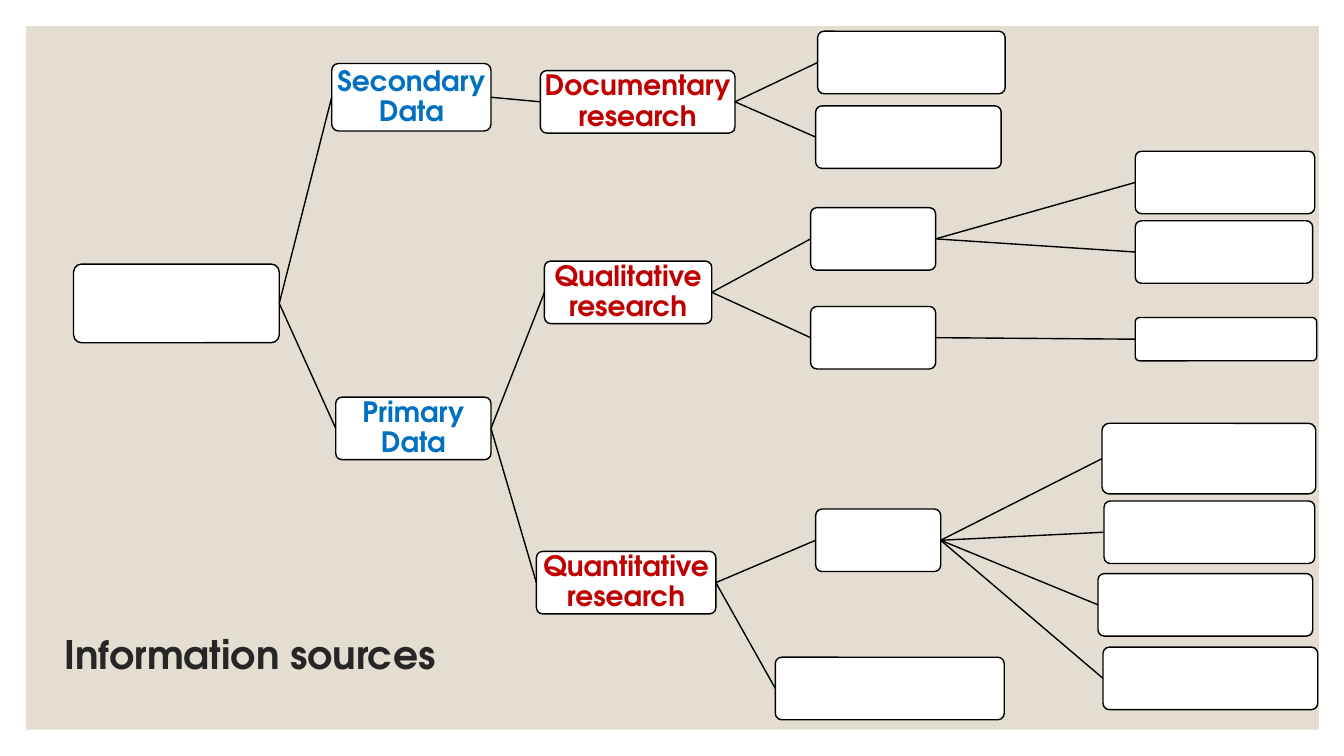
from dataclasses import dataclass

from lxml.etree import SubElement
from pptx import Presentation
from pptx.dml.color import RGBColor
from pptx.enum.shapes import MSO_CONNECTOR, MSO_SHAPE
from pptx.enum.text import MSO_ANCHOR, MSO_AUTO_SIZE, PP_ALIGN
from pptx.oxml.ns import qn
from pptx.util import Inches, Pt


@dataclass(frozen=True)
class Theme:
    """Colours, font and type sizes of the slide."""
    panel: RGBColor = RGBColor(0xE3, 0xDE, 0xD1)
    node: RGBColor = RGBColor(0xFF, 0xFF, 0xFF)
    line: RGBColor = RGBColor(0, 0, 0)
    data: RGBColor = RGBColor(0x00, 0x70, 0xC0)
    research: RGBColor = RGBColor(0xC0, 0, 0)
    title: RGBColor = RGBColor(0x26, 0x26, 0x26)
    font: str = "TeX Gyre Adventor"
    title_size: Pt = Pt(28)
    node_size: Pt = Pt(20)
    line_width: Pt = Pt(1)


@dataclass(frozen=True)
class Node:
    """A box of the tree, with its label and its branches."""
    box: tuple
    label: str = ""
    color: RGBColor = None
    branches: tuple = ()


THEME = Theme()
ROW = 0.62
LEFT_SIDE, RIGHT_SIDE = 1, 3

SECONDARY = Node((3.29, 0.63, 1.58, 0.67), "Secondary Data", THEME.data, (
    Node((5.36, 0.7, 1.93, ROW), "Documentary research", THEME.research, (
        Node((8.11, 0.31, 1.86, ROW)),
        Node((8.09, 1.05, 1.84, ROW)),
    )),
))
QUALITATIVE = Node((5.4, 2.59, 1.66, ROW), "Qualitative research", THEME.research, (
    Node((8.04, 2.06, 1.24, ROW), branches=(
        Node((11.26, 1.5, 1.78, ROW)),
        Node((11.26, 2.19, 1.76, ROW)),
    )),
    Node((8.04, 3.04, 1.24, ROW), branches=(
        Node((11.26, 3.15, 1.8, 0.43)),
    )),
))
QUANTITATIVE = Node((5.32, 5.47, 1.78, ROW), "Quantitative research", THEME.research, (
    Node((8.09, 5.05, 1.24, ROW), branches=(
        Node((10.93, 4.2, 2.12, 0.7)),
        Node((10.95, 4.97, 2.09, ROW)),
        Node((10.89, 5.69, 2.13, ROW)),
        Node((10.94, 6.42, 2.13, ROW)),
    )),
    Node((7.69, 6.52, 2.27, ROW)),
))
PRIMARY = Node((3.33, 3.94, 1.54, ROW), "Primary Data", THEME.data,
               (QUALITATIVE, QUANTITATIVE))
SOURCES = Node((0.73, 2.62, 2.04, 0.78), branches=(SECONDARY, PRIMARY))


def style_text(para, size, color, align):
    """Format a paragraph in the slide's bold font."""
    para.alignment = align
    para.line_spacing = 0.9
    para.font.name = THEME.font
    para.font.size = size
    para.font.bold = True
    para.font.color.rgb = color


def add_panel(page, box):
    """Fill the box with the tinted backdrop."""
    panel = page.shapes.add_shape(MSO_SHAPE.RECTANGLE, *map(Inches, box))
    panel.shadow.inherit = False
    panel.fill.solid()
    panel.fill.fore_color.rgb = THEME.panel
    panel.line.fill.background()


def add_node(page, node):
    """Draw one rounded box with its label."""
    shape = page.shapes.add_shape(MSO_SHAPE.ROUNDED_RECTANGLE, *map(Inches, node.box))
    shape.adjustments[0] = 0.1
    shape.shadow.inherit = False
    shape.fill.solid()
    shape.fill.fore_color.rgb = THEME.node
    shape.line.color.rgb = THEME.line
    shape.line.width = THEME.line_width
    if node.label:
        frame = shape.text_frame
        frame.word_wrap = True
        frame.vertical_anchor = MSO_ANCHOR.MIDDLE
        frame.margin_left = frame.margin_right = Inches(0.01)
        frame.margin_top = frame.margin_bottom = Inches(0.01)
        frame.text = node.label
        style_text(frame.paragraphs[0], THEME.node_size, node.color, PP_ALIGN.CENTER)
    return shape


def add_link(page, parent, child):
    """Join the right side of the parent to the left side of the child."""
    link = page.shapes.add_connector(MSO_CONNECTOR.STRAIGHT, 0, 0, 0, 0)
    link.begin_connect(parent, RIGHT_SIDE)
    link.end_connect(child, LEFT_SIDE)
    link.line.color.rgb = THEME.line
    link.line.width = THEME.line_width
    SubElement(link._element.spPr, qn("a:effectLst"))


def add_tree(page, node):
    """Draw a node, its branches and the links between them."""
    shape = add_node(page, node)
    for branch in node.branches:
        add_link(page, shape, add_tree(page, branch))
    return shape


def place_title(page, box, text):
    """Put the title in the box, in front of the backdrop."""
    title = page.shapes.title
    title.left, title.top, title.width, title.height = map(Inches, box)
    frame = title.text_frame
    frame.text = text
    frame.word_wrap = True
    frame.auto_size = MSO_AUTO_SIZE.NONE
    frame.vertical_anchor = MSO_ANCHOR.MIDDLE
    style_text(frame.paragraphs[0], THEME.title_size, THEME.title, PP_ALIGN.LEFT)
    page.shapes._spTree.append(title._element)


def main():
    """Build the slide and save it."""
    deck = Presentation()
    deck.slide_width, deck.slide_height = Inches(13.33), Inches(7.5)
    page = deck.slides.add_slide(deck.slide_layouts.get_by_name("Title Only"))
    add_panel(page, (0.26, 0.26, 12.82, 6.98))
    add_tree(page, SOURCES)
    place_title(page, (0.54, 6.23, 4.29, 0.57), "Information sources")
    deck.save("out.pptx")


if __name__ == "__main__":
    main()
